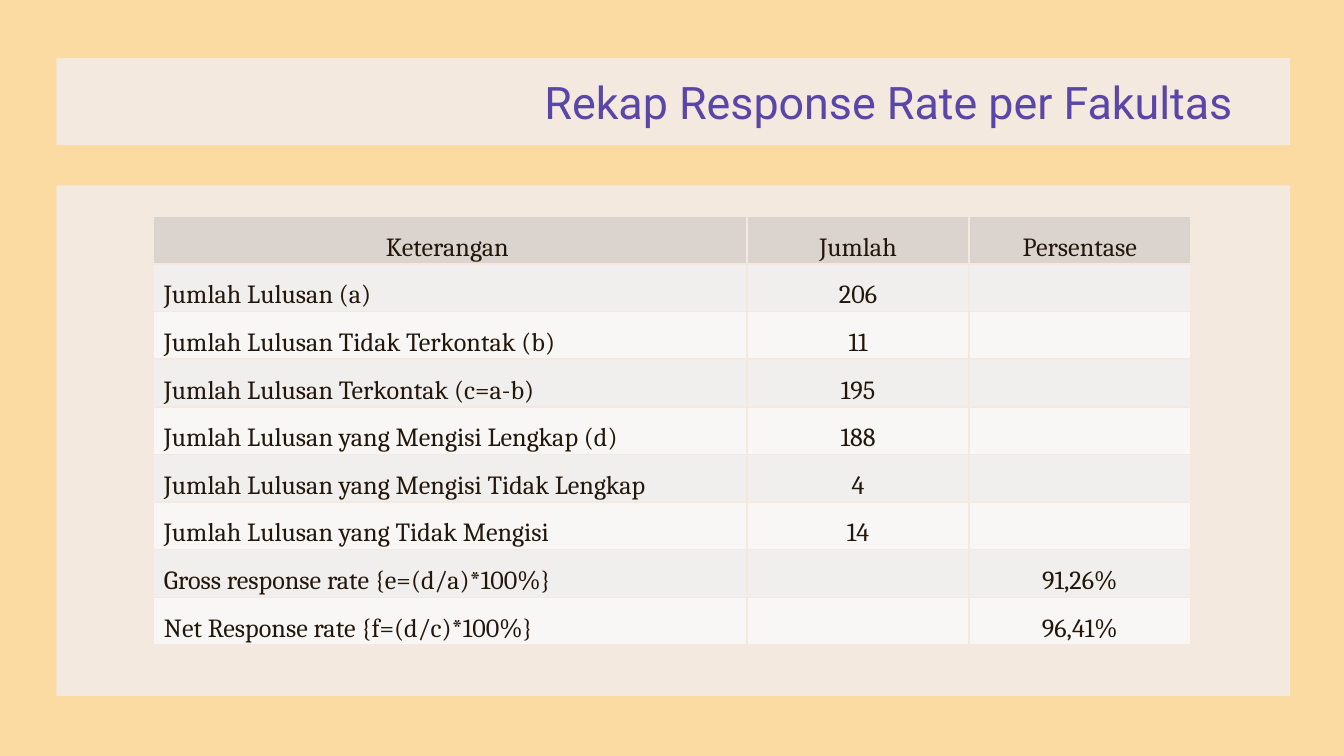
from dataclasses import dataclass

from pptx import Presentation
from pptx.dml.color import RGBColor
from pptx.enum.shapes import MSO_SHAPE
from pptx.enum.text import MSO_ANCHOR, PP_ALIGN
from pptx.oxml import parse_xml
from pptx.oxml.ns import nsdecls
from pptx.util import Inches, Pt

RECT = MSO_SHAPE.RECTANGLE
MIDDLE = MSO_ANCHOR.MIDDLE
LEFT, CENTER, RIGHT = PP_ALIGN.LEFT, PP_ALIGN.CENTER, PP_ALIGN.RIGHT


@dataclass(frozen=True)
class Theme:
    back: str = "FCDBA2"
    panel: str = "F4E9DF"
    title: str = "5A45A8"
    ink: str = "23170C"
    head: str = "DBD4CE"
    bands: tuple = ("F1EFED", "F8F7F6")
    title_font: str = "Roboto"
    body_font: str = "Cambria"
    title_size: int = 24
    body_size: int = 14


ROWS = [
    ("Keterangan\u00a0", "Jumlah", "Persentase"),
    ("Jumlah Lulusan (a)", "206", ""),
    ("Jumlah Lulusan Tidak Terkontak (b)", "11", ""),
    ("Jumlah Lulusan Terkontak (c=a-b)", "195", ""),
    ("Jumlah Lulusan yang Mengisi Lengkap (d)", "188", ""),
    ("Jumlah Lulusan yang Mengisi Tidak Lengkap", "4", ""),
    ("Jumlah Lulusan yang Tidak Mengisi", "14", ""),
    ("Gross response rate {e=(d/a)*100%}", "", "91,26%"),
    ("Net Response rate {f=(d/c)*100%}", "", "96,41%"),
]
WIDTHS = (4.42, 1.65, 1.65)
WIDE = 10


def paint(fill, color):
    fill.solid()
    fill.fore_color.rgb = RGBColor.from_string(color)


def write(frame, text, *, font, size, color, align=LEFT, spacing=None):
    para = frame.paragraphs[0]
    para.alignment = align
    para.line_spacing = spacing
    run = para.add_run()
    run.text = text
    run.font.name = font
    run.font.size = Pt(size)
    run.font.color.rgb = RGBColor.from_string(color)


def edge(cell, side, color, width):
    """Draw one cell border; call before the cell is filled."""
    cell._tc.get_or_add_tcPr().append(parse_xml(
        f'<a:ln{side} {nsdecls("a")} w="{Pt(width)}"><a:solidFill>'
        f'<a:srgbClr val="{color}"/></a:solidFill></a:ln{side}>'))


class Deck:
    def __init__(self, theme, width, height):
        self.theme = theme
        self.file = Presentation()
        self.file.slide_width = Inches(width)
        self.file.slide_height = Inches(height)
        self.slide = self.file.slides.add_slide(self.file.slide_layouts[6])
        paint(self.slide.background.fill, theme.back)

    def panel(self, *box):
        shape = self.slide.shapes.add_shape(RECT, *map(Inches, box))
        shape.shadow.inherit = False
        paint(shape.fill, self.theme.panel)
        shape.line.fill.background()

    def title(self, text, *box):
        frame = self.slide.shapes.add_textbox(*map(Inches, box)).text_frame
        frame.word_wrap = True
        frame.vertical_anchor = MIDDLE
        frame.margin_left = frame.margin_right = Inches(0.1)
        frame.margin_top = frame.margin_bottom = Inches(0.1)
        write(frame, text, font=self.theme.title_font, align=RIGHT,
              size=self.theme.title_size, color=self.theme.title)

    def table(self, rows, widths, left, top, height):
        box = map(Inches, (left, top, sum(widths), height))
        table = self.slide.shapes.add_table(
            len(rows), len(widths), *box).table
        table.first_row = table.horz_banding = False
        for column, width in zip(table.columns, widths):
            column.width = Inches(width)
        for r, row in enumerate(rows):
            for c, text in enumerate(row):
                self.cell(table.cell(r, c), text, r, c)

    def cell(self, cell, text, row, col):
        theme = self.theme
        head, label = row == 0, row > 0 and col == 0
        for side in "LRTB":
            edge(cell, side, theme.panel, 1)
        paint(cell.fill, theme.head if head else theme.bands[(row - 1) % 2])
        cell.vertical_anchor = MIDDLE
        cell.margin_left = Inches(0.08 if label else 0)
        cell.margin_right = cell.margin_top = cell.margin_bottom = 0
        if text:
            write(cell.text_frame, text, font=theme.body_font,
                  size=theme.body_size, color=theme.ink, spacing=1.5,
                  align=LEFT if label else CENTER)


def main():
    deck = Deck(Theme(), WIDE, WIDE * 9 / 16)
    deck.panel(0.42, 0.43, 9.18, 0.65)
    deck.panel(0.42, 1.38, 9.18, 3.8)
    deck.title("Rekap Response Rate per Fakultas", 3.67, 0.43, 5.6, 0.65)
    deck.table(ROWS, WIDTHS, 1.14, 1.61, 3.19)
    deck.file.save("out.pptx")


if __name__ == "__main__":
    main()
